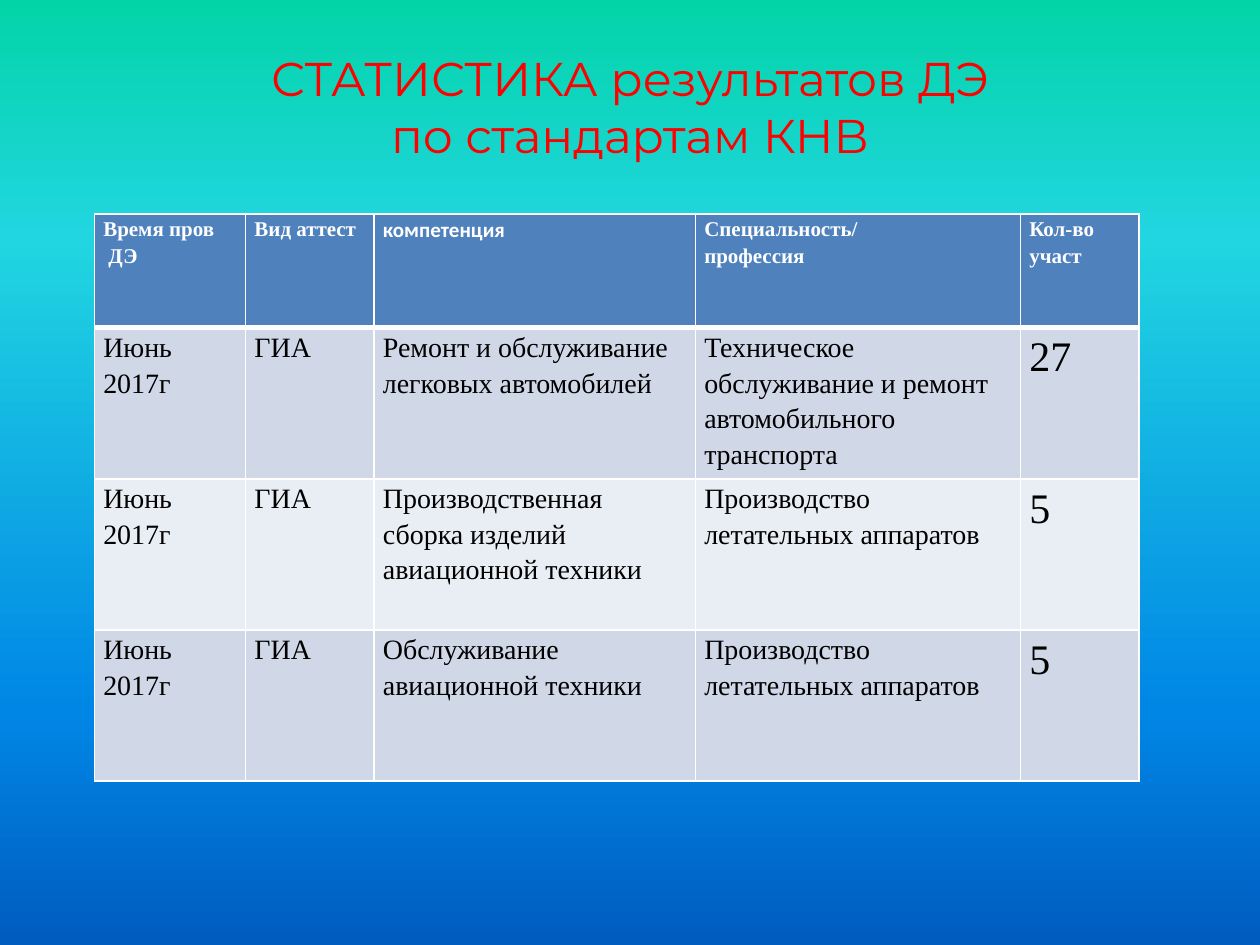
from copy import deepcopy
from typing import NamedTuple

from lxml import etree
from pptx import Presentation
from pptx.dml.color import RGBColor
from pptx.enum.text import MSO_ANCHOR, PP_ALIGN
from pptx.oxml.ns import qn
from pptx.util import Inches, Pt

CENTER, LEFT = PP_ALIGN.CENTER, PP_ALIGN.LEFT
MIDDLE = MSO_ANCHOR.MIDDLE
TITLE_ONLY = 5

RED = RGBColor(0xFF, 0x00, 0x00)
WHITE = RGBColor(0xFF, 0xFF, 0xFF)
BLACK = RGBColor(0x00, 0x00, 0x00)
HEADER_BLUE = RGBColor(0x4F, 0x81, 0xBD)
BANDS = (RGBColor(0xD0, 0xD8, 0xE8), RGBColor(0xE9, 0xED, 0xF4))
BACKGROUND_STOPS = (
    (0, RGBColor(0x03, 0xD4, 0xA8)),
    (0.25, RGBColor(0x21, 0xD6, 0xE0)),
    (0.75, RGBColor(0x00, 0x87, 0xE6)),
    (1, RGBColor(0x00, 0x5C, 0xBF)),
)

SERIF = "Times New Roman"
COLUMN_WIDTHS = (1.2, 1.02, 2.55, 2.58, 0.94)
HEADER_HEIGHT, ROW_HEIGHT = 0.9, 1.2


class Heading(NamedTuple):
    text: str
    font: str = SERIF


class Exam(NamedTuple):
    date: str
    kind: str
    skill: str
    profession: str
    participants: str


HEADINGS = (
    Heading("Время пров\n ДЭ"),
    Heading("Вид аттест"),
    Heading("компетенция", "Calibri"),
    Heading("Специальность/\nпрофессия"),
    Heading("Кол-во участ"),
)
EXAMS = (
    Exam("Июнь 2017г", "ГИА", "Ремонт и обслуживание легковых автомобилей",
         "Техническое обслуживание и ремонт автомобильного транспорта", "27"),
    Exam("Июнь 2017г", "ГИА", "Производственная сборка изделий авиационной техники",
         "Производство летательных аппаратов", "5"),
    Exam("Июнь 2017г", "ГИА", "Обслуживание авиационной техники",
         "Производство летательных аппаратов", "5"),
)


def write_text(frame, text: str, *, size: float, color: RGBColor, font: str = SERIF,
               bold: bool = False, align=LEFT, spacing: float = 1.0) -> None:
    """Fill a text frame, one paragraph for each line of the text."""
    for index, line in enumerate(text.split("\n")):
        para = frame.add_paragraph() if index else frame.paragraphs[0]
        para.alignment = align
        para.line_spacing = spacing
        span = para.add_run()
        span.text = line
        span.font.name = font
        span.font.size = Pt(size)
        span.font.bold = bold
        span.font.color.rgb = color


def paint_background(slide) -> None:
    fill = slide.background.fill
    fill.gradient()
    fill.gradient_angle = 270
    stop_list = slide.element.find(".//" + qn("a:gsLst"))
    while len(stop_list) < len(BACKGROUND_STOPS):
        stop_list.append(deepcopy(stop_list[0]))
    for stop, (position, color) in zip(fill.gradient_stops, BACKGROUND_STOPS):
        stop.position = position
        stop.color.rgb = color


def add_borders(cell, bottom: float, top: float) -> None:
    """Draw white cell borders, with the given top and bottom widths in points."""
    properties = cell._tc.get_or_add_tcPr()
    for side, width in (("L", 1), ("R", 1), ("T", top), ("B", bottom)):
        line = etree.SubElement(properties, qn(f"a:ln{side}"), w=str(Pt(width)))
        solid = etree.SubElement(line, qn("a:solidFill"))
        etree.SubElement(solid, qn("a:srgbClr"), val=str(WHITE))


def format_cell(cell, fill: RGBColor, *, top: float = 1, bottom: float = 1) -> None:
    cell.margin_left = cell.margin_right = Inches(0.07)
    cell.margin_top = cell.margin_bottom = 0
    add_borders(cell, bottom, top)
    cell.fill.solid()
    cell.fill.fore_color.rgb = fill


def add_exam_table(slide) -> None:
    heights = [HEADER_HEIGHT] + [ROW_HEIGHT] * len(EXAMS)
    table = slide.shapes.add_table(
        len(heights), len(COLUMN_WIDTHS), Inches(0.75), Inches(1.7),
        Inches(sum(COLUMN_WIDTHS)), Inches(sum(heights))).table
    for column, width in zip(table.columns, COLUMN_WIDTHS):
        column.width = Inches(width)
    for row, height in zip(table.rows, heights):
        row.height = Inches(height)

    for column, heading in enumerate(HEADINGS):
        cell = table.cell(0, column)
        format_cell(cell, HEADER_BLUE, bottom=3)
        write_text(cell.text_frame, heading.text, size=12, color=WHITE,
                   font=heading.font, bold=True, spacing=1.15)
    for row, exam in enumerate(EXAMS, start=1):
        for column, text in enumerate(exam):
            cell = table.cell(row, column)
            format_cell(cell, BANDS[(row - 1) % 2], top=3 if row == 1 else 1)
            size = 24 if column == len(exam) - 1 else 16
            write_text(cell.text_frame, text, size=size, color=BLACK, spacing=1.15)


def main() -> None:
    deck = Presentation()
    deck.slide_width, deck.slide_height = Inches(10), Inches(7.5)
    slide = deck.slides.add_slide(deck.slide_layouts[TITLE_ONLY])
    paint_background(slide)

    title = slide.shapes.title
    title.left, title.top = Inches(0.5), Inches(0.3)
    title.width, title.height = Inches(9), Inches(1.09)
    title.text_frame.vertical_anchor = MIDDLE
    write_text(title.text_frame, "СТАТИСТИКА результатов ДЭ\nпо стандартам КНВ",
               size=27, color=RED, font="Montserrat", align=CENTER)

    add_exam_table(slide)
    deck.save("out.pptx")


if __name__ == "__main__":
    main()
